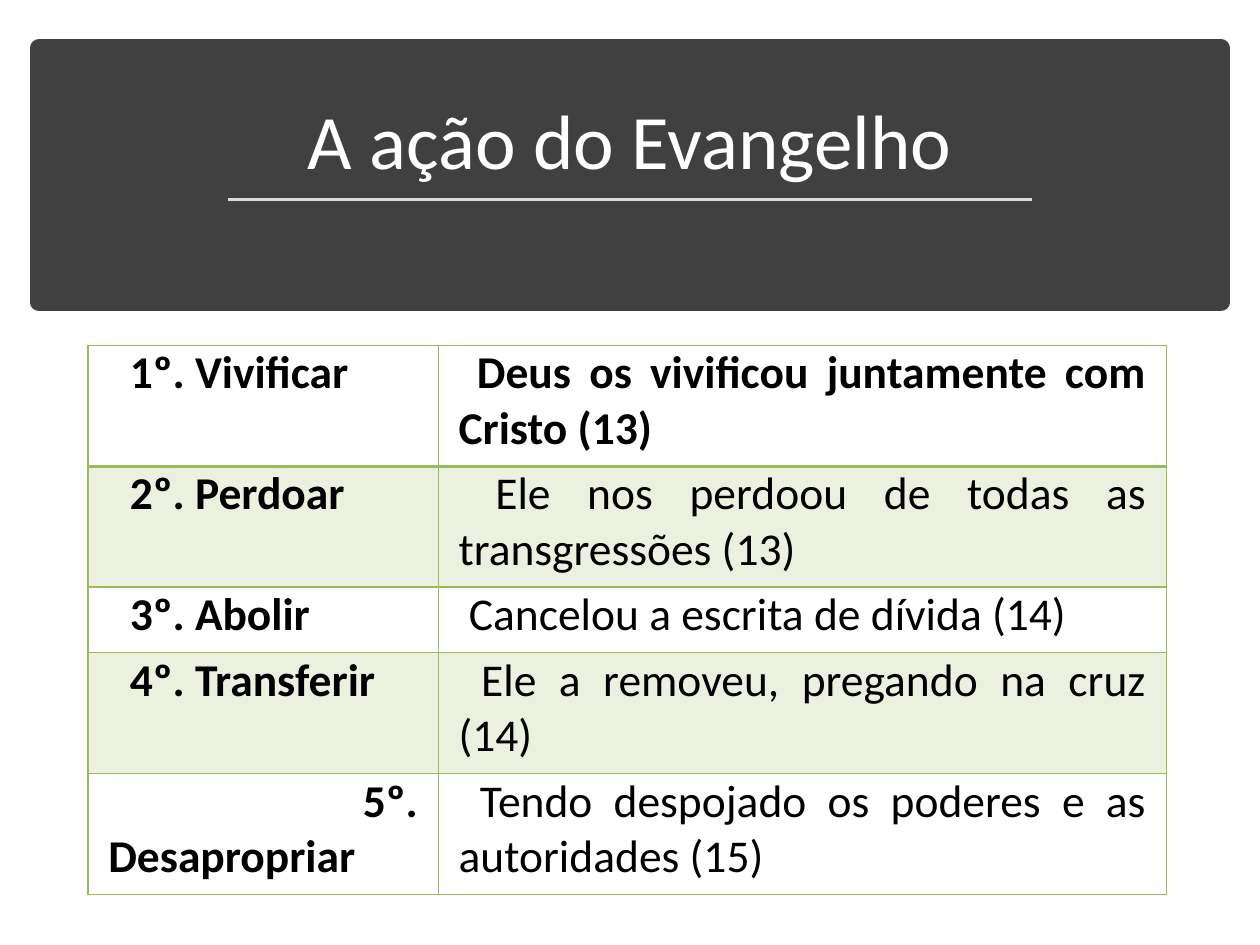
from lxml.etree import SubElement
from pptx import Presentation
from pptx.dml.color import RGBColor
from pptx.enum.shapes import MSO_CONNECTOR, MSO_SHAPE
from pptx.enum.text import MSO_ANCHOR, PP_ALIGN
from pptx.oxml.ns import qn
from pptx.util import Inches, Pt

TITLE = "A ação do Evangelho"
# label, first-line indent of the label, description
ACTIONS = [
    ("1º. Vivificar", 0.17, " Deus os vivificou juntamente com Cristo (13)"),
    ("2º. Perdoar", 0.17, " Ele nos perdoou de todas as transgressões (13)"),
    ("3º. Abolir", 0.17, " Cancelou a escrita de dívida (14)"),
    ("4º. Transferir", 0.17, " Ele a removeu, pregando na cruz (14)"),
    ("5º. Desapropriar", 2.02, " Tendo despojado os poderes e as autoridades (15)"),
]
COLUMN_WIDTHS = [2.78, 5.78]
ROW_HEIGHTS = [0.96, 0.96, 0.52, 0.96, 0.96]
DARK, RULE, GREEN, BAND = "404040", "D9D9D9", "9BBB59", "EBF1DE"
CELL_FORMAT = {
    "margin_left": Inches(0.16), "margin_right": Inches(0.16),
    "margin_top": 0, "margin_bottom": 0, "vertical_anchor": MSO_ANCHOR.TOP,
}


def color(value):
    return RGBColor.from_string(value)


def write(paragraph, text, size, ink, alignment, bold=False):
    paragraph.alignment = alignment
    run = paragraph.add_run()
    run.text = text
    font_format = {"name": "Calibri", "size": Pt(size), "bold": bold}
    for name, value in font_format.items():
        setattr(run.font, name, value)
    run.font.color.rgb = color(ink)


def add_borders(cell, widths):
    """Give the cell a green line on each side, with widths in points."""
    properties = cell._tc.get_or_add_tcPr()
    for side, width in widths.items():
        line = SubElement(properties, qn(f"a:ln{side}"), w=str(Pt(width)))
        fill = SubElement(line, qn("a:solidFill"))
        SubElement(fill, qn("a:srgbClr"), val=GREEN)


def add_banner(slide):
    banner = slide.shapes.add_shape(
        MSO_SHAPE.RECTANGLE, Inches(0.31), Inches(0.38), Inches(9.38), Inches(2.02))
    banner.shadow.inherit = False
    banner.fill.solid()
    banner.fill.fore_color.rgb = color(DARK)
    banner.line.color.rgb = color(DARK)
    banner.line.width = Pt(10)

    title = slide.shapes.add_textbox(
        Inches(0.43), Inches(0.51), Inches(9.14), Inches(1.02))
    frame = title.text_frame
    frame.word_wrap = True
    frame.vertical_anchor = MSO_ANCHOR.BOTTOM
    frame.paragraphs[0].line_spacing = 0.9
    write(frame.paragraphs[0], TITLE, 44, "FFFFFF", PP_ALIGN.CENTER)

    rule = slide.shapes.add_connector(
        MSO_CONNECTOR.STRAIGHT, Inches(1.81), Inches(1.58), Inches(8.19), Inches(1.58))
    rule.line.color.rgb = color(RULE)
    rule.line.width = Pt(1.75)
    SubElement(rule._element.spPr, qn("a:effectLst"))


def add_actions(slide):
    table = slide.shapes.add_table(
        len(ACTIONS), len(COLUMN_WIDTHS), Inches(0.7), Inches(2.74),
        Inches(sum(COLUMN_WIDTHS)), Inches(sum(ROW_HEIGHTS))).table
    table.first_row = table.horz_banding = False
    for column, width in zip(table.columns, COLUMN_WIDTHS):
        column.width = Inches(width)
    for row, height in zip(table.rows, ROW_HEIGHTS):
        row.height = Inches(height)

    for i, (label, indent, description) in enumerate(ACTIONS):
        for j, text in enumerate((label, description)):
            cell = table.cell(i, j)
            for name, value in CELL_FORMAT.items():
                setattr(cell, name, value)
            add_borders(cell, {"L": 1, "R": 1, "T": 2 if i == 1 else 1,
                               "B": 2 if i == 0 else 1})
            if i % 2:
                cell.fill.solid()
                cell.fill.fore_color.rgb = color(BAND)
            else:
                cell.fill.background()
            paragraph = cell.text_frame.paragraphs[0]
            write(paragraph, text, 26, "000000", PP_ALIGN.JUSTIFY,
                  bold=i == 0 or j == 0)
            if j == 0:
                paragraph._p.get_or_add_pPr().set("indent", str(Inches(indent)))


def main():
    presentation = Presentation()
    presentation.slide_width = Inches(10)
    presentation.slide_height = Inches(7.5)
    slide = presentation.slides.add_slide(presentation.slide_layouts[6])
    add_banner(slide)
    add_actions(slide)
    presentation.save("out.pptx")


if __name__ == "__main__":
    main()
